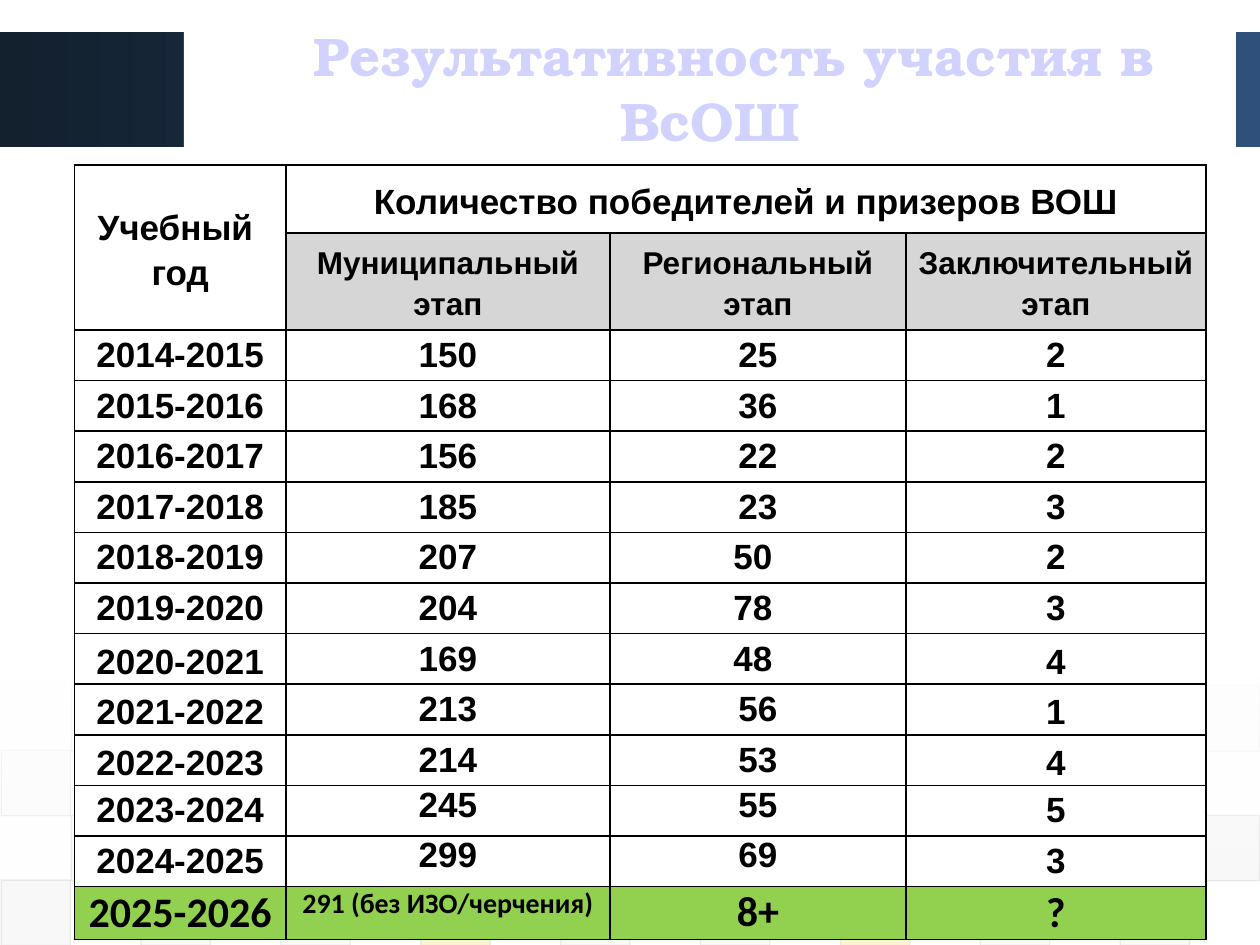
"""Build the slide of olympiad results by school year."""
import pptx
import pptx.dml.color
import pptx.enum.shapes
import pptx.enum.text
import pptx.oxml.ns
import pptx.util
from lxml import etree
from dataclasses import dataclass

Inches, Pt = pptx.util.Inches, pptx.util.Pt
RGB = pptx.dml.color.RGBColor.from_string
qn = pptx.oxml.ns.qn
RECT = pptx.enum.shapes.MSO_SHAPE.RECTANGLE
CENTER = pptx.enum.text.PP_ALIGN.CENTER
TOP = pptx.enum.text.MSO_ANCHOR.TOP
MIDDLE = pptx.enum.text.MSO_ANCHOR.MIDDLE


@dataclass(frozen=True)
class Theme:
    """Colours, fonts and type sizes."""
    ink: str = "000000"
    paper: str = "FFFFFF"
    head: str = "D6D6D6"
    mark: str = "92D050"
    edge: str = "DDDDDD"
    glow: str = "8C8CF6"
    body: str = "Arial"
    last: str = "Calibri"
    serif: str = "TeX Gyre Bonum"
    title: float = 31
    large: float = 24
    text: float = 20
    sub: float = 18
    small: float = 16


T = Theme()
BAND = [(0, "13202E", 100), (100, "2E507A", 100)]
VEIL = [(0, T.paper, 90), (100, T.paper, 0)]
SHINE = [(0, "DEDEFF", 100), (9, "D2D2FF", 100), (50, "1919B1", 100),
         (79, "D2D2FF", 100), (100, "DEDEFF", 100)]
TINTS = {"D": "DDDDDD", "E": "EAEAEA", "G": "8AC246", "Y": "EFC821"}
TILES = [("YEEYDYEGE", 5), ("DDDDGDDDY", 10), ("DGDDDDGDD", 20), ("DDDYDDYDD", 20)]

TITLE = "Результативность участия в ВсОШ"
YEAR = "Учебный \nгод"
COUNT = "Количество победителей и призеров ВОШ"
STAGES = ["Муниципальный этап", "Региональный этап", "Заключительный этап"]
RESULTS = [
    ("2014-2015", "150", "25", "2"),
    ("2015-2016", "168", "36", "1"),
    ("2016-2017", "156", "22", "2"),
    ("2017-2018", "185", "23", "3"),
    ("2018-2019", "207", "50 ", "2"),
    ("2019-2020", "204", "78 ", "3"),
    ("2020-2021", "169", "48 ", "4"),
    ("2021-2022", "213", "56", "1"),
    ("2022-2023", "214", "53", "4"),
    ("2023-2024", "245", "55", "5"),
    ("2024-2025", "299", "69", "3"),
]
NOW = ("2025-2026", "291 (без ИЗО/черчения)", "8+", "?")
COLS = [1.68, 2.57, 2.35, 2.38]
ROWS = [0.54, 0.77] + [4.42 / len(RESULTS)] * len(RESULTS) + [0.42]


def tint(host, color, alpha=100):
    """Add a colour with its opacity to an XML element."""
    node = etree.SubElement(host, qn("a:srgbClr"), val=color)
    if alpha < 100:
        etree.SubElement(node, qn("a:alpha"), val=str(alpha * 1000))


def blend(stops, angle):
    """Return a linear gradient fill."""
    fill = etree.Element(qn("a:gradFill"), rotWithShape="1")
    steps = etree.SubElement(fill, qn("a:gsLst"))
    for place, color, alpha in stops:
        tint(etree.SubElement(steps, qn("a:gs"), pos=str(place * 1000)), color, alpha)
    etree.SubElement(fill, qn("a:lin"), ang=str(angle * 60000), scaled="0")
    return fill


def stroke(tag, color, width):
    """Return a solid line element."""
    line = etree.Element(qn(tag), w=str(Pt(width)))
    tint(etree.SubElement(line, qn("a:solidFill")), color)
    return line


def block(slide, x, y, w, h, fill=None, stops=None, angle=0):
    """Add a rectangle with a plain or gradient fill and no line."""
    shape = slide.shapes.add_shape(RECT, Inches(x), Inches(y), Inches(w), Inches(h))
    shape.shadow.inherit = False
    shape.line.fill.background()
    if stops:
        shape._element.spPr.insert(2, blend(stops, angle))
    else:
        shape.fill.solid()
        shape.fill.fore_color.rgb = RGB(fill)
    return shape


def tile(slide, x, y, color, alpha):
    """Add one pale square of the backdrop."""
    shape = block(slide, x, y, 0.55, 0.52, color)
    shape.line.color.rgb = RGB(T.edge)
    shape.line.width = Pt(0.75)
    nodes = shape._element.spPr.iter(qn("a:srgbClr"))
    for node, part in zip(list(nodes), (alpha, 60)):
        etree.SubElement(node, qn("a:alpha"), val=str(part * 1000))


def scene(slide):
    """Draw the band, the checkered squares and the veil."""
    block(slide, 0, 0.25, 10, 0.92, stops=BAND)
    for row, (codes, alpha) in enumerate(TILES):
        for col, code in enumerate(codes):
            x = 0.01 + 0.555 * (2 * col + (row + 1) % 2)
            tile(slide, x, 5.44 + 0.515 * row, TINTS[code], alpha)
    block(slide, 0, 5.37, 10, 1.62, stops=VEIL, angle=90)


def heading(slide):
    """Add the title on its white panel."""
    frame = block(slide, 1.46, 0.13, 8.35, 1.67, T.paper).text_frame
    frame.word_wrap = True
    frame.vertical_anchor = TOP
    para = frame.paragraphs[0]
    para.alignment = CENTER
    para._p.get_or_add_pPr().set("indent", str(Inches(0.38)))
    run = para.add_run()
    run.text = TITLE
    run.font.size, run.font.bold, run.font.name = Pt(T.title), True, T.serif
    props = run._r.get_or_add_rPr()
    props.insert(0, blend(SHINE, 90))
    props.insert(0, stroke("a:ln", T.glow, 0.83))


def write(cell, text, size=T.text, fill=T.paper, anchor=MIDDLE, font=T.body, space=1.15):
    """Fill and format one table cell."""
    cell.margin_left = cell.margin_right = Inches(0.07)
    cell.margin_top = cell.margin_bottom = 0
    cell.vertical_anchor = anchor
    cell.text = text
    for para in cell.text_frame.paragraphs:
        para.alignment, para.line_spacing = CENTER, space
        para.font.size, para.font.bold, para.font.name = Pt(size), True, font
        para.font.color.rgb = RGB(T.ink)
    cell.fill.solid()
    cell.fill.fore_color.rgb = RGB(fill)


def grid(slide):
    """Add the table of winners."""
    frame = slide.shapes.add_table(len(ROWS), len(COLS), Inches(0.59), Inches(1.31),
                                   Inches(sum(COLS)), Inches(sum(ROWS)))
    table = frame.table
    table.first_row = table.horz_banding = False
    for col, width in zip(table.columns, COLS):
        col.width = Inches(width)
    for row, height in zip(table.rows, ROWS):
        row.height = Inches(height)
    table.cell(0, 0).merge(table.cell(1, 0))
    table.cell(0, 1).merge(table.cell(0, 3))
    write(table.cell(0, 0), YEAR)
    write(table.cell(0, 1), COUNT)
    for col, stage in enumerate(STAGES, 1):
        write(table.cell(1, col), stage, T.sub, T.head)
    for row, values in enumerate(RESULTS):
        for col, value in enumerate(values):
            anchor = MIDDLE if row >= 6 and col in (0, 3) else TOP
            write(table.cell(row + 2, col), value, anchor=anchor,
                  space=1.15 if row < 9 else 1.0)
    for col, value in enumerate(NOW):
        write(table.cell(len(ROWS) - 1, col), value, T.small if col == 1 else T.large,
              T.mark, MIDDLE if col in (0, 3) else TOP, T.last, 1.0)
    for cell in table.iter_cells():
        props = cell._tc.get_or_add_tcPr()
        for place, side in enumerate("LRTB"):
            props.insert(place, stroke("a:ln" + side, T.ink, 1))


def main():
    """Build and save the deck."""
    deck = pptx.Presentation()
    deck.slide_width, deck.slide_height = Inches(10), Inches(7.5)
    slide = deck.slides.add_slide(deck.slide_layouts[6])
    scene(slide)
    heading(slide)
    grid(slide)
    deck.save("out.pptx")


if __name__ == "__main__":
    main()
